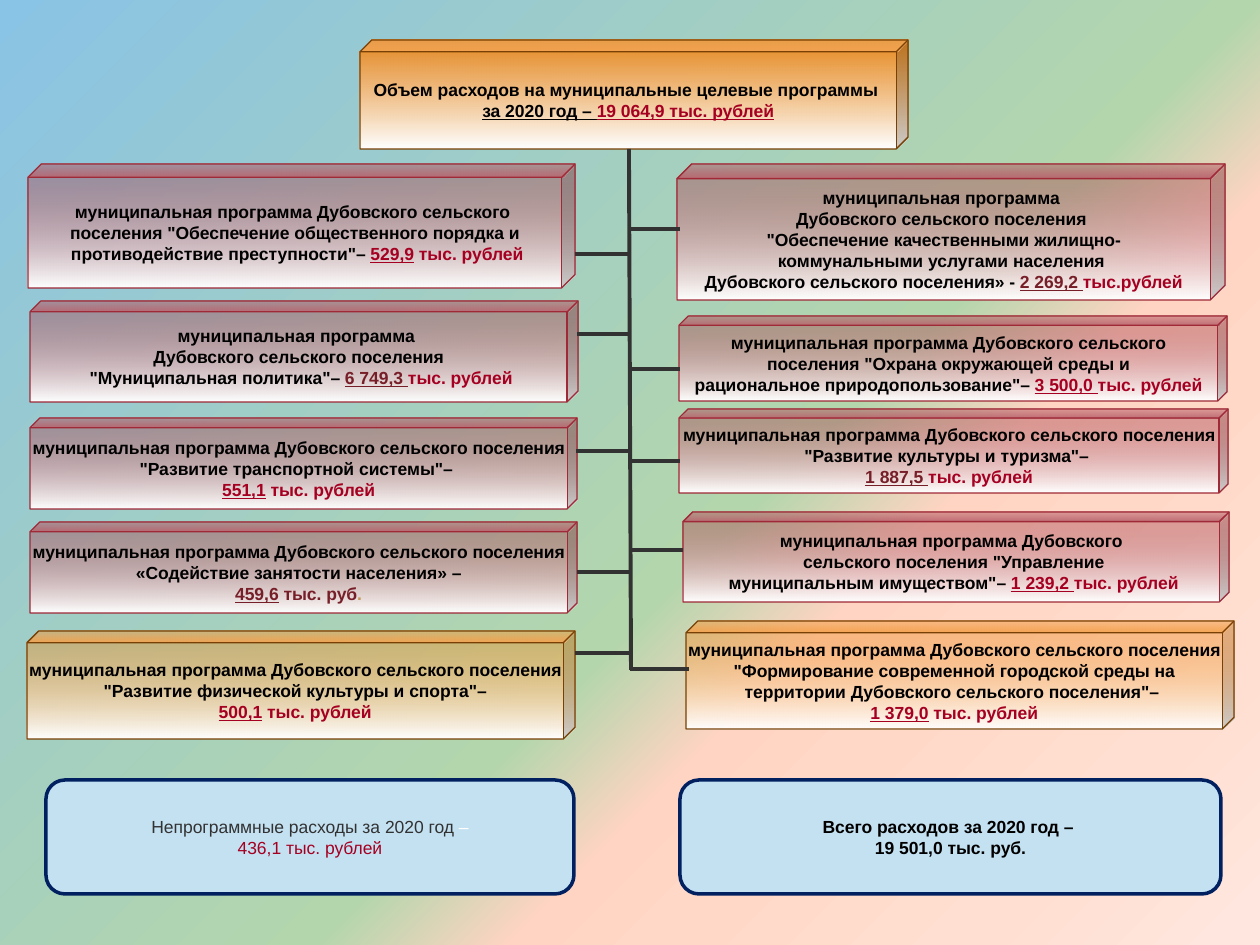
from dataclasses import dataclass

from lxml import etree
from pptx import Presentation
from pptx import util as u
from pptx.dml.color import RGBColor
from pptx.enum import shapes, text
from pptx.oxml.ns import qn

SCALE = 914400 / 126  # EMU in one px

COLORS = {
    "black": "000000", "grey": "323232", "white": "FFFFFF", "red": "A50021",
    "wine": "771F28", "sand": "C19859", "navy": "002060", "sky": "C4E1F2",
    "orange": "F07F09", "brown": "784004", "crimson": "9F2936",
}
BACKDROP = [(0, "89C3E5"), (57, "B3D6AC"), (66, "FFD4C2"),
            (73, "FFD8C7"), (87, "FFDFD1"), (100, "FFE7E0")]
PROGRAM = "муниципальная программа Дубовского сельского"


@dataclass
class Span:
    text: str
    color: str = "black"
    underline: bool = False
    bold: bool = True


@dataclass
class Look:
    fill: str
    line: str
    opacity: int = 40


@dataclass
class Box:
    x: int
    y: int
    w: int
    h: int
    paras: list[list[Span]]
    look: Look
    wrap: bool = True


@dataclass
class Branch:
    x1: int
    y1: int
    x2: int
    y2: int


def px(length: int) -> int:
    return round(length * SCALE)


def rgb(name: str) -> RGBColor:
    return RGBColor.from_string(COLORS[name])


def line(words: str) -> list[Span]:
    return [Span(words)]


def amount(value: str, unit: str = " тыс. рублей", color: str = "red") -> list[Span]:
    return [Span(value, color, True), Span(unit, "wine" if unit.endswith("руб") else "red")]


def paint_gradient(owner, fill, stops: list, angle: int, opacity: int = 100) -> None:
    """Fill with the stops; the opacity applies to the first one."""
    fill.gradient()
    fill.gradient_angle = 360 - angle
    stop_list = next(owner.iter(qn("a:gsLst")))
    for old in list(stop_list):
        stop_list.remove(old)
    for place, value in stops:
        stop = etree.SubElement(stop_list, qn("a:gs"), pos=str(place * 1000))
        color = etree.SubElement(stop, qn("a:srgbClr"), val=value)
        if place == 0 and opacity < 100:
            etree.SubElement(color, qn("a:alpha"), val=str(opacity * 1000))


def write(shape, paras: list[list[Span]], wrap: bool) -> None:
    frame = shape.text_frame
    frame.word_wrap = wrap
    frame.vertical_anchor = text.MSO_ANCHOR.MIDDLE
    for index, spans in enumerate(paras):
        para = frame.paragraphs[0] if index == 0 else frame.add_paragraph()
        para.alignment = text.PP_ALIGN.CENTER
        for span in spans:
            run = para.add_run()
            run.text = span.text
            run.font.name = "Arial"
            run.font.size = u.Pt(10)
            run.font.bold = span.bold
            run.font.underline = span.underline
            run.font.color.rgb = rgb(span.color)


def add_box(page, box: Box, kind, line_width: float):
    shape = page.shapes.add_shape(kind, px(box.x), px(box.y), px(box.w), px(box.h))
    shape.shadow.inherit = False
    shape.line.color.rgb = rgb(box.look.line)
    shape.line.width = u.Pt(line_width)
    write(shape, box.paras, box.wrap)
    return shape


def add_cube(page, box: Box) -> None:
    shape = add_box(page, box, shapes.MSO_SHAPE.CUBE, 0.75)
    shape.adjustments[0] = 0.108
    stops = [(0, COLORS[box.look.fill]), (100, COLORS["white"])]
    paint_gradient(shape.element, shape.fill, stops, 90, box.look.opacity)
    frame = shape.text_frame
    frame.margin_left = frame.margin_right = frame.margin_top = frame.margin_bottom = 0


def add_total(page, box: Box) -> None:
    shape = add_box(page, box, shapes.MSO_SHAPE.FLOWCHART_ALTERNATE_PROCESS, 2)
    shape.fill.solid()
    shape.fill.fore_color.rgb = rgb(box.look.fill)


def add_branch(page, branch: Branch) -> None:
    link = page.shapes.add_connector(shapes.MSO_CONNECTOR.STRAIGHT, px(branch.x1),
                                     px(branch.y1), px(branch.x2), px(branch.y2))
    link.line.color.rgb = rgb("grey")
    link.line.width = u.Pt(2.25)
    etree.SubElement(link.element.spPr, qn("a:effectLst"))


HEADER = Look("orange", "brown", 88)
RED = Look("crimson", "crimson")
AMBER = Look("orange", "brown")
TOTAL = Look("sky", "navy")

CUBES = [
    Box(360, 40, 548, 109, [
        line("Объем расходов на муниципальные целевые программы "),
        [Span("за 2020 год – ", underline=True),
         Span("19 064,9 тыс. рублей", "red", True)]], HEADER),
    # Left column
    Box(28, 164, 547, 124, [
        line(PROGRAM + " "),
        line("поселения \"Обеспечение общественного порядка и"),
        line(" противодействие преступности\"– ") + amount("529,9")], RED, False),
    Box(30, 301, 548, 101, [
        line("муниципальная программа "),
        line("Дубовского сельского поселения"),
        line(" \"Муниципальная политика\"– ")
        + amount("6 749,3 ", "тыс. рублей", "wine")], RED, False),
    Box(30, 418, 547, 91, [
        line(PROGRAM + " поселения \"Развитие транспортной системы\"– "),
        amount("551,1")], RED),
    Box(30, 522, 547, 91, [
        line(PROGRAM + " поселения"),
        line("«Содействие занятости населения» –"),
        amount("459,6", " тыс. руб", "wine") + [Span(".", "sand")]], RED),
    Box(27, 631, 548, 108, [
        line(PROGRAM + " поселения \"Развитие физической культуры и спорта\"–"),
        amount("500,1")], AMBER),
    # Right column
    Box(677, 164, 548, 136, [
        line("муниципальная программа "),
        line("Дубовского сельского поселения "),
        line("\"Обеспечение качественными жилищно-"),
        line("коммунальными услугами населения "),
        line("Дубовского сельского поселения» - ")
        + amount("2 269,2 ", "тыс.рублей", "wine")], RED, False),
    Box(679, 316, 548, 85, [
        line(PROGRAM),
        line(" поселения \"Охрана окружающей среды и "),
        line("рациональное природопользование\"– ")
        + amount("3 500,0 ", "тыс. рублей")], RED, False),
    Box(679, 409, 549, 84, [
        line(PROGRAM + " поселения \"Развитие культуры и туризма\"– "),
        amount("1 887,5 ", "тыс. рублей", "wine")], RED),
    Box(683, 512, 546, 90, [
        line("муниципальная программа Дубовского"),
        line(" сельского поселения \"Управление"),
        line(" муниципальным имуществом\"– ")
        + amount("1 239,2 ", "тыс. рублей")], RED, False),
    Box(686, 621, 548, 108, [
        line(PROGRAM + " поселения \"Формирование современной городской среды "
             "на территории Дубовского сельского поселения\"– "),
        amount("1 379,0")], AMBER),
]
TOTALS = [
    Box(46, 780, 528, 114, [
        [Span("Непрограммные расходы за 2020 год", "grey", bold=False),
         Span(" –", "white", bold=False)],
        [Span("436,1 тыс. рублей", "red", bold=False)]], TOTAL),
    Box(680, 780, 541, 114, [
        line("Всего расходов за 2020 год – "),
        line("19 501,0 тыс. руб.")], TOTAL),
]
TRUNK = Branch(631, 670, 629, 149)
LEFT_BRANCHES = [(575, 254), (577, 334), (576, 451), (577, 572), (575, 653)]
RIGHT_BRANCHES = [(680, 229), (680, 369), (680, 461), (683, 550), (689, 669)]


def main() -> None:
    deck = Presentation()
    deck.slide_width, deck.slide_height = u.Inches(10), u.Inches(7.5)
    page = deck.slides.add_slide(deck.slide_layouts[6])
    paint_gradient(page.element, page.background.fill, BACKDROP, 45)

    # Programmes
    for box in CUBES:
        add_cube(page, box)

    # Tree: trunk with branches on both sides
    add_branch(page, TRUNK)
    for end, y in LEFT_BRANCHES:
        add_branch(page, Branch(end, y, 630, y))
    for end, y in RIGHT_BRANCHES:
        add_branch(page, Branch(630, y, end, y))

    # Totals
    for box in TOTALS:
        add_total(page, box)

    deck.save("out.pptx")


if __name__ == "__main__":
    main()
